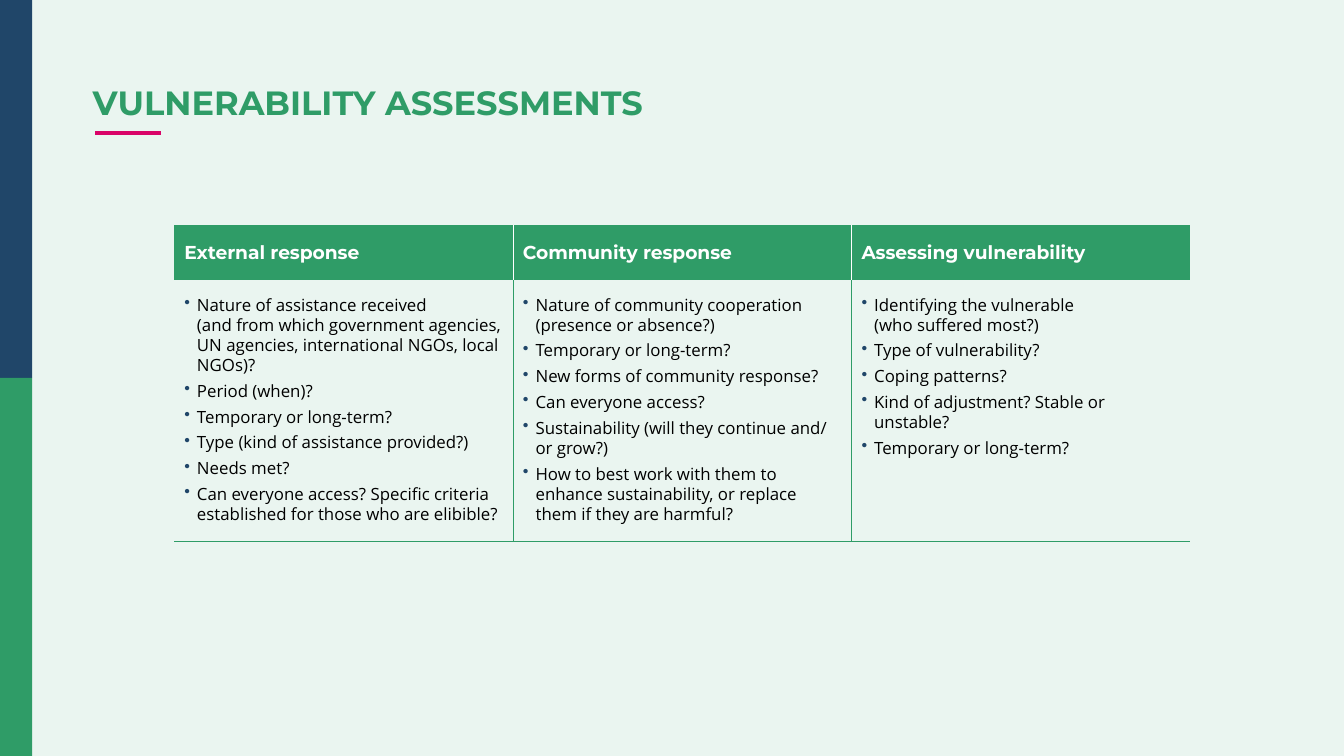
from lxml import etree
from pptx import Presentation
from pptx import util as u
from pptx.dml import color
from pptx.enum import shapes, text
from pptx.oxml import ns

GREEN, NAVY, PINK, WHITE, BLACK = "2F9C67", "204669", "D90368", "FFFFFF", "000000"
BACKGROUND = "EAF5F0"
HEADING, BODY = "Montserrat", "Open Sans"

TITLE = "VULNERABILITY ASSESSMENTS"
COLUMNS = [
    ("External response", [
        "Nature of assistance received \v(and from which government agencies, "
        "UN agencies, international NGOs, local NGOs)?",
        "Period (when)?",
        "Temporary or long-term?",
        "Type (kind of assistance provided?)",
        "Needs met?",
        "Can everyone access? Specific criteria established for those who are elibible?",
    ]),
    ("Community response", [
        "Nature of community cooperation (presence or absence?)",
        "Temporary or long-term?",
        "New forms of community response?",
        "Can everyone access?",
        "Sustainability (will they continue and/\vor grow?)",
        "How to best work with them to enhance sustainability, "
        "or replace them if they are harmful?",
    ]),
    ("Assessing vulnerability", [
        "Identifying the vulnerable \v(who suffered most?)",
        "Type of vulnerability?",
        "Coping patterns?",
        "Kind of adjustment? Stable or unstable?",
        "Temporary or long-term?",
    ]),
]

PAGE_WIDTH, PAGE_HEIGHT = 720, 405
BAR_WIDTH = 17.2
TABLE_LEFT, TABLE_TOP, COLUMN_WIDTH = 93.4, 120.6, 181.4
HEADER_HEIGHT, BODY_HEIGHT = 29.4, 140


def rgb(value):
    return color.RGBColor.from_string(value)


def write(para, words, *, font, size, ink, bold=False):
    para.text = words
    for span in para.runs:
        span.font.name = font
        span.font.size = u.Pt(size)
        span.font.bold = bold
        span.font.color.rgb = rgb(ink)


def add_bullet(para):
    props = para._p.get_or_add_pPr()
    props.set("marL", str(u.Pt(6.75)))
    props.set("indent", str(u.Pt(-6.75)))
    tint = etree.SubElement(props, ns.qn("a:buClr"))
    etree.SubElement(tint, ns.qn("a:srgbClr"), val=NAVY)
    etree.SubElement(props, ns.qn("a:buChar"), char="•")


def set_borders(cell, edges):
    """Draw the edges given as {side: colour} and hide the others."""
    props = cell._tc.get_or_add_tcPr()
    for side in "LRTB":
        line = etree.SubElement(props, ns.qn(f"a:ln{side}"), w=str(u.Pt(0.5)))
        if side in edges:
            fill = etree.SubElement(line, ns.qn("a:solidFill"))
            etree.SubElement(fill, ns.qn("a:srgbClr"), val=edges[side])
        else:
            etree.SubElement(line, ns.qn("a:noFill"))


def add_side_bars(page):
    height = PAGE_HEIGHT / 2
    for index, tint in enumerate((NAVY, GREEN)):
        bar = page.shapes.add_shape(
            shapes.MSO_SHAPE.RECTANGLE, 0, u.Pt(index * height), u.Pt(BAR_WIDTH), u.Pt(height))
        bar.shadow.inherit = False
        bar.fill.solid()
        bar.fill.fore_color.rgb = rgb(tint)
        bar.line.fill.background()


def add_title(page):
    rule = page.shapes.add_connector(
        shapes.MSO_CONNECTOR.STRAIGHT, u.Pt(51), u.Pt(71.2), u.Pt(86.2), u.Pt(71.2))
    rule.line.color.rgb = rgb(PINK)
    rule.line.width = u.Pt(2.25)
    etree.SubElement(rule._element.spPr, ns.qn("a:effectLst"))

    box = page.shapes.add_textbox(u.Pt(49.6), u.Pt(42.4), u.Pt(620.6), u.Pt(26.8))
    frame = box.text_frame
    frame.word_wrap = True
    frame.margin_left = 0
    frame.vertical_anchor = text.MSO_ANCHOR.MIDDLE
    para = frame.paragraphs[0]
    para.line_spacing = 0.9
    write(para, TITLE, font=HEADING, size=18, ink=GREEN, bold=True)


def add_response_table(page):
    count = len(COLUMNS)
    table = page.shapes.add_table(
        2, count, u.Pt(TABLE_LEFT), u.Pt(TABLE_TOP),
        u.Pt(count * COLUMN_WIDTH), u.Pt(HEADER_HEIGHT + BODY_HEIGHT)).table
    table.first_row = table.horz_banding = False
    table.rows[0].height = u.Pt(HEADER_HEIGHT)
    table.rows[1].height = u.Pt(BODY_HEIGHT)

    for index, (heading, points) in enumerate(COLUMNS):
        table.columns[index].width = u.Pt(COLUMN_WIDTH)
        header, body = table.cell(0, index), table.cell(1, index)
        inner = ("L" if index else "") + ("R" if index < count - 1 else "")
        set_borders(header, dict.fromkeys(inner, WHITE))
        set_borders(body, dict.fromkeys(inner + "B", GREEN))
        for cell in (header, body):
            cell.margin_left = cell.margin_right = u.Pt(5.4)
            cell.margin_top = cell.margin_bottom = u.Pt(8.5)

        header.fill.solid()
        header.fill.fore_color.rgb = rgb(GREEN)
        header.vertical_anchor = text.MSO_ANCHOR.MIDDLE
        write(header.text_frame.paragraphs[0], heading,
              font=HEADING, size=10, ink=WHITE, bold=True)

        body.fill.background()
        frame = body.text_frame
        for number, point in enumerate(points):
            para = frame.add_paragraph() if number else frame.paragraphs[0]
            add_bullet(para)
            para.line_spacing = u.Pt(10.8)
            para.space_after = u.Pt(3)
            write(para, point, font=BODY, size=9, ink=BLACK)


def main():
    deck = Presentation()
    deck.slide_width, deck.slide_height = u.Pt(PAGE_WIDTH), u.Pt(PAGE_HEIGHT)
    page = deck.slides.add_slide(deck.slide_layouts[6])
    page.background.fill.solid()
    page.background.fill.fore_color.rgb = rgb(BACKGROUND)
    add_title(page)
    add_side_bars(page)
    add_response_table(page)
    deck.save("out.pptx")


if __name__ == "__main__":
    main()
